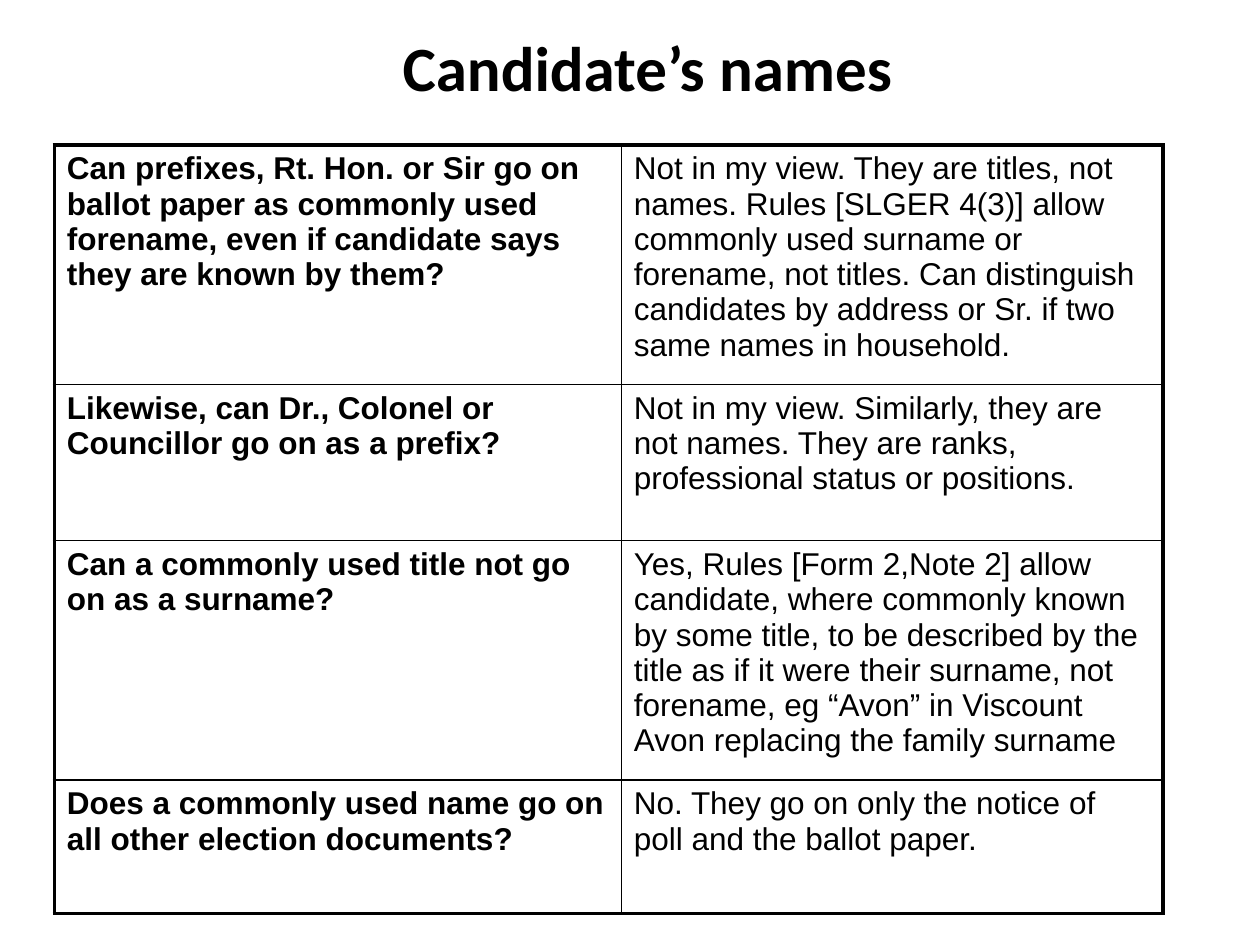
from dataclasses import dataclass

import pptx
import pptx.dml.color
import pptx.enum.text
import pptx.oxml
import pptx.oxml.ns
import pptx.util

Pt = pptx.util.Pt
ALIGN = pptx.enum.text.PP_ALIGN
ANCHOR = pptx.enum.text.MSO_ANCHOR


@dataclass(frozen=True)
class Theme:
    ink: str = "000000"
    title_font: str = "Calibri"
    body_font: str = "Arial"
    title_size: float = 36
    body_size: float = 18
    outer_line: float = 2.25
    inner_line: float = 1


THEME = Theme()
COLUMN_WIDTHS = [324, 309.6]
ROW_HEIGHTS = [136.8, 89.3, 136.8, 76.3]
QUESTIONS = [
    ("Can prefixes, Rt. Hon. or Sir go on ballot paper as commonly used forename, "
     "even if candidate says they are known by them?",
     "Not in my view. They are titles, not names. Rules [SLGER 4(3)] allow commonly used "
     "surname or forename, not titles. Can distinguish candidates by address or Sr. "
     "if two same names in household."),
    ("Likewise, can Dr., Colonel or Councillor go on as a prefix?",
     "Not in my view. Similarly, they are not names. They are ranks, "
     "professional status or positions."),
    ("Can a commonly used title not go on as a surname?",
     "Yes, Rules [Form 2,Note 2] allow candidate, where commonly known by some title, "
     "to be described by the title as if it were their surname, not forename, "
     "eg “Avon” in Viscount Avon replacing the family surname"),
    ("Does a commonly used name go on all other election documents?",
     "No. They go on only the notice of poll and the ballot paper."),
]


def write(tf, text, font=THEME.body_font, size=THEME.body_size, bold=False, align=ALIGN.LEFT):
    tf.word_wrap = True
    p = tf.paragraphs[0]
    p.alignment = align
    r = p.add_run()
    r.text = text
    r.font.name = font
    r.font.size = Pt(size)
    r.font.bold = bold
    r.font.color.rgb = pptx.dml.color.RGBColor.from_string(THEME.ink)


def set_borders(cell, widths):
    """Draw the cell's sides; widths maps L, R, T and B, in that order, to points."""
    tc_pr = cell._tc.get_or_add_tcPr()
    for side, width in widths.items():
        tc_pr.append(pptx.oxml.parse_xml(
            f'<a:ln{side} {pptx.oxml.ns.nsdecls("a")} w="{Pt(width)}">'
            f'<a:solidFill><a:srgbClr val="{THEME.ink}"/></a:solidFill></a:ln{side}>'))


def add_title(s, left, top, width, height, text):
    tf = s.shapes.add_textbox(Pt(left), Pt(top), Pt(width), Pt(height)).text_frame
    tf.vertical_anchor = ANCHOR.MIDDLE
    write(tf, text, font=THEME.title_font, size=THEME.title_size, bold=True, align=ALIGN.CENTER)


def add_question_table(s, left, top, rows):
    last_row, last_col = len(rows) - 1, len(COLUMN_WIDTHS) - 1
    table = s.shapes.add_table(len(rows), len(COLUMN_WIDTHS), Pt(left), Pt(top),
                               Pt(sum(COLUMN_WIDTHS)), Pt(sum(ROW_HEIGHTS))).table
    table.first_row = table.horz_banding = False
    for column, width in zip(table.columns, COLUMN_WIDTHS):
        column.width = Pt(width)
    for row, height in zip(table.rows, ROW_HEIGHTS):
        row.height = Pt(height)
    for i, texts in enumerate(rows):
        for j, text in enumerate(texts):
            cell = table.cell(i, j)
            on_edge = {"L": j == 0, "R": j == last_col, "T": i == 0, "B": i == last_row}
            set_borders(cell, {side: THEME.outer_line if outer else THEME.inner_line
                               for side, outer in on_edge.items()})
            cell.fill.background()
            write(cell.text_frame, text, bold=j == 0)


def main():
    prs = pptx.Presentation()
    prs.slide_width, prs.slide_height = Pt(720), Pt(540)
    s = prs.slides.add_slide(prs.slide_layouts[6])
    add_title(s, 46, -7.2, 648, 90, "Candidate’s names")
    add_question_table(s, 31, 82.8, QUESTIONS)
    prs.save("out.pptx")


if __name__ == "__main__":
    main()
